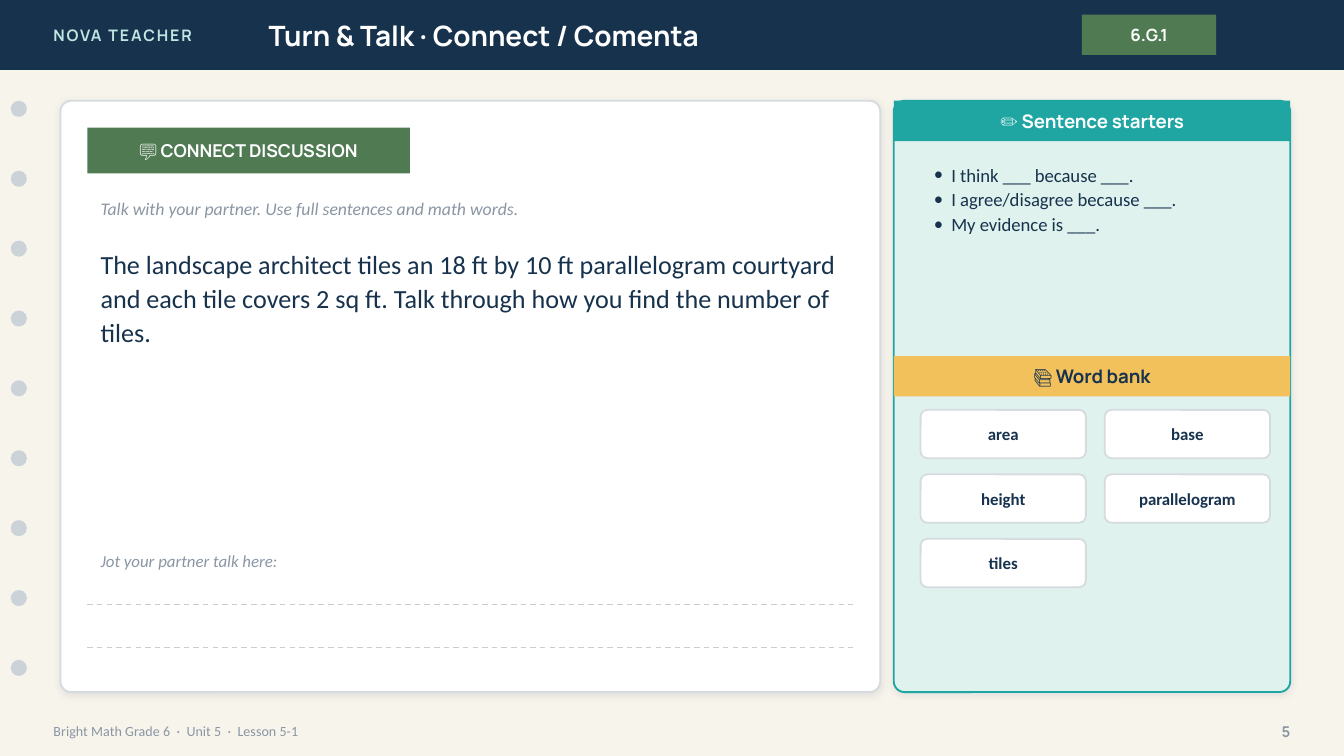
from lxml import etree
from pptx import Presentation
from pptx.dml.color import RGBColor
from pptx.enum.dml import MSO_LINE
from pptx.enum.shapes import MSO_CONNECTOR, MSO_SHAPE
from pptx.enum.text import MSO_ANCHOR, PP_ALIGN
from pptx.oxml.ns import qn
from pptx.util import Inches, Pt

RECT, ROUND, OVAL = MSO_SHAPE.RECTANGLE, MSO_SHAPE.ROUNDED_RECTANGLE, MSO_SHAPE.OVAL
LEFT, CENTER, RIGHT = PP_ALIGN.LEFT, PP_ALIGN.CENTER, PP_ALIGN.RIGHT
TOP, MIDDLE = MSO_ANCHOR.TOP, MSO_ANCHOR.MIDDLE
HEADING, BODY = "Manrope", "Calibri"
NAVY, GREEN, TEAL, MINT, GOLD = "17324D", "4F7A52", "1FA6A2", "DFF2EE", "F2C15B"
WHITE, CREAM, GREY, BORDER = "FFFFFF", "F7F4EC", "8A96A3", "D6DBDF"
DOT, RULE, PALE_TEAL, SHADOW = "CBD3D9", "C7CDD2", "BFE6E2", "1C2E42"

STARTERS = [
    "I think ___ because ___.",
    "I agree/disagree because ___.",
    "My evidence is ___.",
]
WORDS = ["area", "base", "height", "parallelogram", "tiles"]
QUESTION = (
    "The landscape architect tiles an 18 ft by 10 ft parallelogram courtyard "
    "and each tile covers 2 sq ft. Talk through how you find the number of tiles."
)
HINT = "Talk with your partner. Use full sentences and math words."

SLIDE_WIDTH = 10
SLIDE_HEIGHT = SLIDE_WIDTH * 9 / 16
HEADER_HEIGHT = 0.52
CARD_TOP, CARD_HEIGHT = 0.75, 4.4
CARD_LEFT, CARD_WIDTH = 0.45, 6.1
PANEL_LEFT, PANEL_WIDTH, BAND_HEIGHT = 6.65, 2.95, 0.3
CONTENT_LEFT, CONTENT_WIDTH = 0.65, 5.7
WORD_LEFT, WORD_TOP, WORD_WIDTH, WORD_HEIGHT = 6.85, 3.05, 1.23, 0.36
WORD_STEP_X, WORD_STEP_Y = 1.37, 0.48
DOT_LEFT, DOT_SIZE, DOT_COUNT, DOT_STEP = 0.08, 0.12, 9, 0.52
RULE_TOPS = [4.5, 4.82]


def color(value):
    return RGBColor.from_string(value)


def add_bullet(paragraph):
    properties = paragraph._p.get_or_add_pPr()
    properties.set("marL", str(Inches(0.13)))
    properties.set("indent", str(-Inches(0.13)))
    etree.SubElement(properties, qn("a:buFont")).set("typeface", BODY)
    etree.SubElement(properties, qn("a:buChar")).set("char", "•")


def write(shape, lines, size, font, fill, align=LEFT, anchor=MIDDLE, bold=False,
          italic=False, line_spacing=None, tracking=None, bullets=False):
    frame = shape.text_frame
    frame.word_wrap = True
    frame.vertical_anchor = anchor
    for index, line in enumerate(lines):
        paragraph = frame.add_paragraph() if index else frame.paragraphs[0]
        paragraph.alignment = align
        if line_spacing:
            paragraph.line_spacing = line_spacing
        if bullets:
            add_bullet(paragraph)
        run = paragraph.add_run()
        run.text = line
        run.font.name = font
        run.font.size = Pt(size)
        run.font.bold = bold
        run.font.italic = italic
        run.font.color.rgb = color(fill)
        if tracking:
            run._r.get_or_add_rPr().set("spc", str(tracking))


def add_text(slide, box, lines, size, font, fill, **options):
    shape = slide.shapes.add_textbox(*map(Inches, box))
    write(shape, lines, size, font, fill, **options)


def add_block(slide, kind, box, fill, border=None, radius=None):
    shape = slide.shapes.add_shape(kind, *map(Inches, box))
    shape.shadow.inherit = False
    shape.fill.solid()
    shape.fill.fore_color.rgb = color(fill)
    if border:
        shape.line.color.rgb = color(border)
        shape.line.width = Pt(1)
    else:
        shape.line.fill.background()
    if radius:
        shape.adjustments[0] = radius / min(box[2:])
    return shape


def add_label(slide, box, fill, text, size, text_color=WHITE):
    shape = add_block(slide, RECT, box, fill)
    write(shape, [text], size, HEADING, text_color, align=CENTER, bold=True)


def add_card(slide, box, fill, border):
    shape = add_block(slide, ROUND, box, fill, border, radius=0.08)
    effects = shape._element.spPr.find(qn("a:effectLst"))
    shadow = etree.SubElement(effects, qn("a:outerShdw"), blurRad=str(Pt(4)),
                              dist=str(Pt(1)), dir="5400000", algn="bl", rotWithShape="0")
    tint = etree.SubElement(shadow, qn("a:srgbClr"), val=SHADOW)
    etree.SubElement(tint, qn("a:alpha"), val="10000")


def add_rule(slide, top):
    left, right = CONTENT_LEFT, CONTENT_LEFT + CONTENT_WIDTH
    rule = slide.shapes.add_connector(MSO_CONNECTOR.STRAIGHT, *map(Inches, (left, top, right, top)))
    rule.line.color.rgb = color(RULE)
    rule.line.width = Pt(0.75)
    rule.line.dash_style = MSO_LINE.DASH
    etree.SubElement(rule._element.spPr, qn("a:effectLst"))


def add_frame(slide):
    add_block(slide, RECT, (0, 0, SLIDE_WIDTH, HEADER_HEIGHT), NAVY)
    add_text(slide, (0.3, 0, 2.4, HEADER_HEIGHT), ["NOVA TEACHER"], 8.5, HEADING, PALE_TEAL,
             bold=True, tracking=100)
    add_text(slide, (1.9, 0, 5.6, HEADER_HEIGHT), ["Turn & Talk · Connect / Comenta"], 15,
             HEADING, WHITE, bold=True)
    add_label(slide, (8.05, 0.11, 1, 0.3), GREEN, "6.G.1", 9)
    for index in range(DOT_COUNT):
        add_block(slide, OVAL, (DOT_LEFT, CARD_TOP + index * DOT_STEP, DOT_SIZE, DOT_SIZE), DOT)
    add_text(slide, (0.3, 5.3, 7, 0.28), ["Bright Math Grade 6  ·  Unit 5  ·  Lesson 5-1"], 7.5,
             BODY, GREY)
    add_text(slide, (9.2, 5.3, 0.5, 0.28), ["5"], 8, HEADING, GREY, align=RIGHT, bold=True)


def add_discussion(slide):
    add_card(slide, (CARD_LEFT, CARD_TOP, CARD_WIDTH, CARD_HEIGHT), WHITE, BORDER)
    add_label(slide, (CONTENT_LEFT, 0.95, 2.4, 0.34), GREEN, "💬 CONNECT DISCUSSION", 9.5)
    add_text(slide, (CONTENT_LEFT, 1.4, CONTENT_WIDTH, 0.3), [HINT], 9.5, BODY, GREY, italic=True)
    add_text(slide, (CONTENT_LEFT, 1.78, CONTENT_WIDTH, 2), [QUESTION], 14, BODY, NAVY,
             anchor=TOP, line_spacing=1.08)
    add_text(slide, (CONTENT_LEFT, 4.05, CONTENT_WIDTH, 0.25), ["Jot your partner talk here:"], 9,
             BODY, GREY, italic=True)
    for top in RULE_TOPS:
        add_rule(slide, top)


def add_support(slide):
    add_card(slide, (PANEL_LEFT, CARD_TOP, PANEL_WIDTH, CARD_HEIGHT), MINT, TEAL)
    add_label(slide, (PANEL_LEFT, CARD_TOP, PANEL_WIDTH, BAND_HEIGHT), TEAL,
              "✏️ Sentence starters", 10)
    add_text(slide, (WORD_LEFT, 1.15, 2.6, 1.4), STARTERS, 10, BODY, NAVY, anchor=TOP,
             line_spacing=1.1, bullets=True)
    add_label(slide, (PANEL_LEFT, 2.65, PANEL_WIDTH, BAND_HEIGHT), GOLD, "📚 Word bank", 10, NAVY)
    for index, word in enumerate(WORDS):
        row, column = divmod(index, 2)
        box = (WORD_LEFT + column * WORD_STEP_X, WORD_TOP + row * WORD_STEP_Y,
               WORD_WIDTH, WORD_HEIGHT)
        tile = add_block(slide, ROUND, box, WHITE, BORDER, radius=0.05)
        write(tile, [word], 9, BODY, NAVY, align=CENTER, bold=True)


def main():
    presentation = Presentation()
    presentation.slide_width = Inches(SLIDE_WIDTH)
    presentation.slide_height = Inches(SLIDE_HEIGHT)
    slide = presentation.slides.add_slide(presentation.slide_layouts[6])
    slide.background.fill.solid()
    slide.background.fill.fore_color.rgb = color(CREAM)
    add_frame(slide)
    add_discussion(slide)
    add_support(slide)
    presentation.save("out.pptx")


if __name__ == "__main__":
    main()
